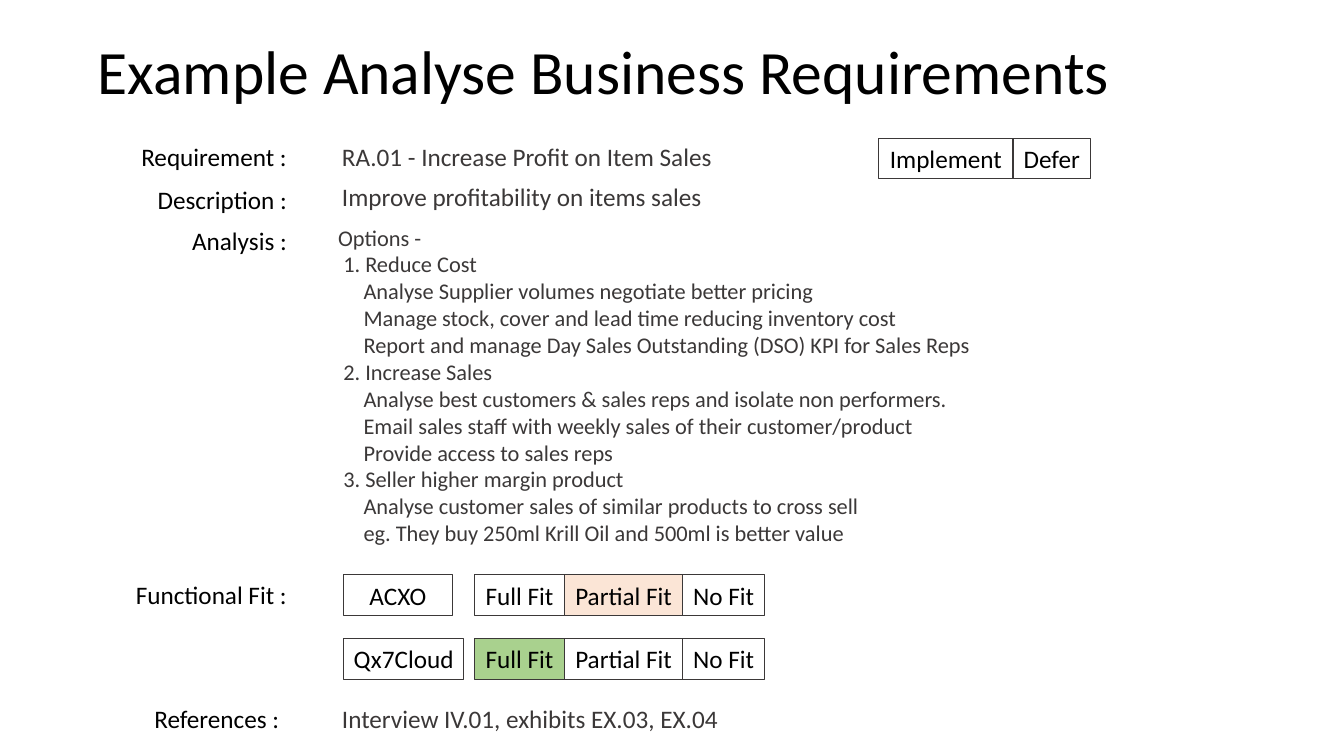
from pptx import Presentation
from pptx.dml.color import RGBColor
from pptx.enum.shapes import MSO_SHAPE
from pptx.enum.text import MSO_ANCHOR, MSO_AUTO_SIZE, PP_ALIGN
from pptx.oxml.xmlchemy import OxmlElement
from pptx.util import Pt

COLORS = {"black": "000000", "grey": "3B3838", "partial": "FBE5D6", "full": "A9D18E"}
FONT = "Calibri"
ROW_HEIGHT = 29.1
VALUE_LEFT = 237.2
PRODUCT_LEFT = 245.5
FIT_LEFT = 339.2
FIT_CELLS = [("Full Fit", 64), ("Partial Fit", 84.5), ("No Fit", 58.3)]
DECISION_CELLS = [("Implement", 95.8), ("Defer", 55.4)]

LABELS = [
    ("Requirement :", 97.2, 212),
    ("Description :", 128.2, 212),
    ("Analysis :", 157.2, 212),
    ("Functional Fit :", 410.4, 212),
    ("References :", 499, 206.6),
]
VALUES = [
    ("RA.01 - Increase Profit on Item Sales", 97.2),
    ("Improve profitability on items sales", 126),
    ("Interview IV.01, exhibits EX.03, EX.04", 499),
]
PRODUCTS = [("ACXO", 77.4, 410.4, "Partial Fit", "partial"),
            ("Qx7Cloud", 85.7, 456, "Full Fit", "full")]
OPTIONS = [
    ("1. Reduce Cost", [
        "Analyse Supplier volumes negotiate better pricing",
        "Manage stock, cover and lead time reducing inventory cost",
        "Report and manage Day Sales Outstanding (DSO) KPI for Sales Reps"]),
    ("2. Increase Sales", [
        "Analyse best customers & sales reps and isolate non performers.",
        "Email sales staff with weekly sales of their customer/product",
        "Provide access to sales reps"]),
    ("3. Seller higher margin product", [
        "Analyse customer sales of similar products to cross sell",
        "eg. They buy 250ml Krill Oil and 500ml is better value"]),
]


def color(name):
    """Return the named colour."""
    return RGBColor.from_string(COLORS[name])


def place(shape, left, top, width, height):
    """Position a shape, in points."""
    shape.left, shape.top = Pt(left), Pt(top)
    shape.width, shape.height = Pt(width), Pt(height)


def style_paragraph(paragraph, size, color_name, alignment=PP_ALIGN.LEFT):
    """Format a paragraph and its runs."""
    paragraph.alignment = alignment
    for run in paragraph.runs:
        run.font.name = FONT
        run.font.size = Pt(size)
        run.font.color.rgb = color(color_name)


def add_title(slide, text):
    """Fill the title placeholder."""
    title = slide.shapes.title
    place(title, 62.6, 0.7, 828, 104.4)
    frame = title.text_frame
    frame.text = text
    frame.auto_size = MSO_AUTO_SIZE.NONE
    frame.vertical_anchor = MSO_ANCHOR.MIDDLE
    frame.paragraphs[0].line_spacing = 0.9
    style_paragraph(frame.paragraphs[0], 44, "black")


def add_options(slide):
    """Fill the body placeholder with the indented list of options."""
    body = slide.placeholders[1]
    place(body, 234.4, 156.2, 509, 239.8)
    lines = [("Options -", 0)]
    for heading, details in OPTIONS:
        lines.append((heading, 3.6))
        lines += [(detail, 18.1) for detail in details]
    frame = body.text_frame
    frame.text = "\n".join(text for text, _ in lines)
    frame.auto_size = MSO_AUTO_SIZE.NONE
    for paragraph, (_, indent) in zip(frame.paragraphs, lines):
        paragraph.space_before = Pt(0)
        style_paragraph(paragraph, 16, "grey")
        properties = paragraph._p.get_or_add_pPr()
        properties.set("marL", str(Pt(indent)))
        properties.set("indent", "0")
        properties.append(OxmlElement("a:buNone"))


def add_text(slide, text, left, top, width, color_name, alignment=PP_ALIGN.LEFT):
    """Add one line of text."""
    box = slide.shapes.add_textbox(Pt(left), Pt(top), Pt(width), Pt(ROW_HEIGHT))
    box.text_frame.text = text
    box.text_frame.word_wrap = True
    style_paragraph(box.text_frame.paragraphs[0], 18, color_name, alignment)


def add_cell(slide, text, left, top, width, fill=None):
    """Add an outlined box with centred text."""
    cell = slide.shapes.add_shape(
        MSO_SHAPE.RECTANGLE, Pt(left), Pt(top), Pt(width), Pt(ROW_HEIGHT))
    cell.shadow.inherit = False
    if fill:
        cell.fill.solid()
        cell.fill.fore_color.rgb = color(fill)
    else:
        cell.fill.background()
    cell.line.color.rgb = color("grey")
    cell.line.width = Pt(0.75)
    frame = cell.text_frame
    frame.text = text
    frame.word_wrap = False
    frame.vertical_anchor = MSO_ANCHOR.MIDDLE
    style_paragraph(frame.paragraphs[0], 18, "black", PP_ALIGN.CENTER)


def add_choices(slide, cells, left, top, chosen=None, fill=None):
    """Add adjoining boxes, with the chosen one filled."""
    for text, width in cells:
        add_cell(slide, text, left, top, width, fill if text == chosen else None)
        left += width


def main():
    """Build the slide and save it."""
    presentation = Presentation()
    presentation.slide_width, presentation.slide_height = Pt(960), Pt(540)
    slide = presentation.slides.add_slide(presentation.slide_layouts[1])
    add_title(slide, "Example Analyse Business Requirements")
    add_options(slide)
    for text, top, right in LABELS:
        add_text(slide, text, right - 130, top, 130, "black", PP_ALIGN.RIGHT)
    for text, top in VALUES:
        add_text(slide, text, VALUE_LEFT, top, 308, "grey")
    for name, width, top, chosen, fill in PRODUCTS:
        add_cell(slide, name, PRODUCT_LEFT, top, width)
        add_choices(slide, FIT_CELLS, FIT_LEFT, top, chosen, fill)
    add_choices(slide, DECISION_CELLS, 627.8, 98.6)
    presentation.save("out.pptx")


if __name__ == "__main__":
    main()
